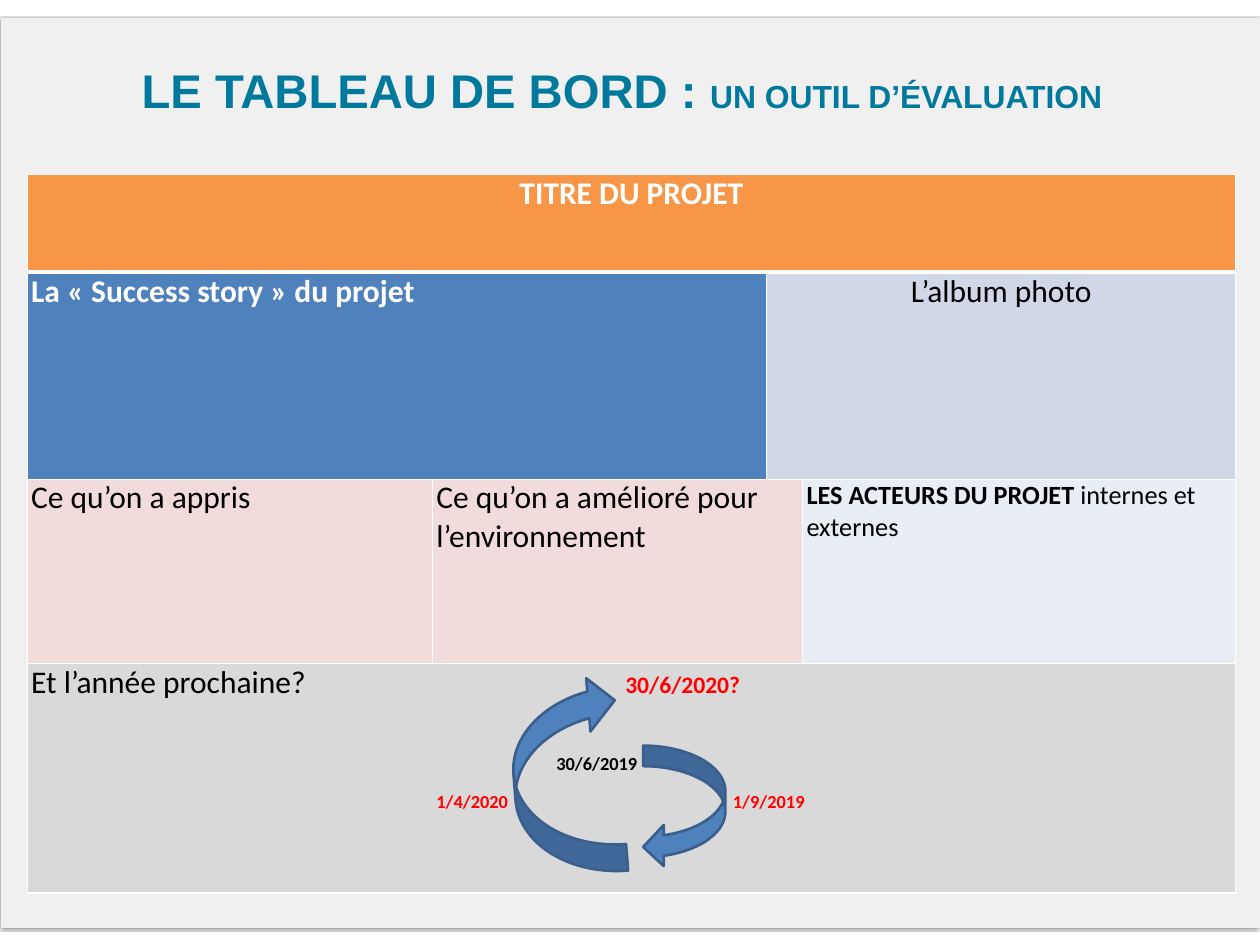
import pptx
import pptx.dml.color
import pptx.enum.shapes
import pptx.enum.text
import pptx.oxml
import pptx.oxml.ns
import pptx.util

ALIGN = pptx.enum.text.PP_ALIGN
# The slide is a grid of square steps, 133.4 columns by 100 rows
COLUMNS, ROWS = 133.4, 100
STEP = pptx.util.Inches(0.1)
NS = pptx.oxml.ns.nsdecls("a")


def grid(*steps):
    return [round(step * STEP) for step in steps]


def color(code):
    return pptx.dml.color.RGBColor.from_string(code)


def paint(item, code):
    item.fill.solid()
    item.fill.fore_color.rgb = color(code)


def write(para, text, font="Calibri", size=24, code="000000", bold=False):
    span = para.add_run()
    span.text = text
    span.font.name = font
    span.font.size = pptx.util.Pt(size)
    span.font.bold = bold
    span.font.color.rgb = color(code)


def set_tabs(para, *stops):
    """Left tab stops, in grid steps from the start of the text."""
    tabs = "".join(f'<a:tab pos="{pos}" algn="l"/>' for pos in grid(*stops))
    para._p.get_or_add_pPr().append(
        pptx.oxml.parse_xml(f"<a:tabLst {NS}>{tabs}</a:tabLst>"))


def set_borders(cell, bottom=1):
    props = cell._tc.get_or_add_tcPr()
    for index, side in enumerate("LRTB"):
        width = pptx.util.Pt(bottom if side == "B" else 1)
        props.insert(index, pptx.oxml.parse_xml(
            f'<a:ln{side} {NS} w="{width}"><a:solidFill>'
            f'<a:srgbClr val="FFFFFF"/></a:solidFill></a:ln{side}>'))


def add_panel(page, box):
    panel = page.shapes.add_shape(
        pptx.enum.shapes.MSO_SHAPE.RECTANGLE, *grid(*box))
    paint(panel, "F0F0F0")
    panel.line.fill.background()
    panel._element.spPr.append(pptx.oxml.parse_xml(
        f'<a:effectLst {NS}><a:outerShdw blurRad="25400" dist="12700" '
        'dir="5400000" rotWithShape="0"><a:srgbClr val="000000">'
        '<a:alpha val="50000"/></a:srgbClr></a:outerShdw></a:effectLst>'))
    # Keep the panel behind the title
    page.shapes._spTree.insert(2, panel._element)


def add_title(page, box):
    title = page.shapes.title
    title.left, title.top, title.width, title.height = grid(*box)
    frame = title.text_frame
    frame.margin_left = frame.margin_right = 0
    frame.margin_top = frame.margin_bottom = 0
    frame.auto_size = pptx.enum.text.MSO_AUTO_SIZE.NONE
    frame.vertical_anchor = pptx.enum.text.MSO_ANCHOR.TOP
    para = frame.paragraphs[0]
    para.alignment = ALIGN.LEFT
    style = dict(font="Arial", code="00799D", bold=True)
    write(para, "LE TABLEAU DE BORD : ", size=36, **style)
    write(para, "UN OUTIL D’ÉVALUATION", size=24.3, **style)


def add_dashboard(page, box):
    widths = (42.9, 35.4, 3.8, 45.8)
    heights = (10.3, 21.9, 19.5, 24.3)
    table = page.shapes.add_table(
        len(heights), len(widths), *grid(*box)).table
    table.first_row = table.horz_banding = False
    for column, width in zip(table.columns, grid(*widths)):
        column.width = width
    for row, height in zip(table.rows, grid(*heights)):
        row.height = height

    # Row, first column, last column, fill, alignment, (text, format) spans
    heading = dict(code="FFFFFF", bold=True)
    areas = [
        (0, 0, 3, "F79646", ALIGN.CENTER, [("TITRE DU PROJET", heading)]),
        (1, 0, 1, "4F81BD", ALIGN.LEFT,
         [("La «\u00a0Success story\u00a0» du projet".replace("\u00a0", " "), heading)]),
        (1, 2, 3, "D0D8E8", ALIGN.CENTER, [("L’album photo", {})]),
        (2, 0, 0, "F2DCDB", ALIGN.LEFT, [("Ce qu’on a appris", {})]),
        (2, 1, 2, "F2DCDB", ALIGN.LEFT,
         [("Ce qu’on a amélioré pour l’environnement", {})]),
        (2, 3, 3, "E9EDF4", ALIGN.LEFT,
         [("LES ACTEURS DU PROJET ", dict(size=20, bold=True)),
          ("internes et externes", dict(size=20))]),
        (3, 0, 3, "D9D9D9", ALIGN.LEFT, [("Et l’année prochaine?", {})]),
    ]
    for row, first, last, fill, align, spans in areas:
        cell = table.cell(row, first)
        if last > first:
            cell.merge(table.cell(row, last))
        for column in range(first, last + 1):
            part = table.cell(row, column)
            paint(part, fill)
            set_borders(part, bottom=3 if row == 0 else 1)
        cell.margin_left, cell.margin_right = grid(0.4, 0.4)
        cell.margin_top = cell.margin_bottom = 0
        para = cell.text_frame.paragraphs[0]
        para.alignment = align
        for text, style in spans:
            write(para, text, **style)
    add_dates(table.cell(3, 0).text_frame)


def add_dates(frame):
    """Dates of the yearly cycle, set on tab stops around the arrows."""
    para = frame.paragraphs[0]
    set_tabs(para, 62.9)
    write(para, "\t30/6/2020?", size=18, code="FF0000", bold=True)
    lines = [
        ("\t30/6/2019", "000000", 39, (55.6,)),
        ("\t1/4/2020\t1/9/2019", "FF0000", 12, (42.9, 74.3)),
    ]
    for text, code, gap, stops in lines:
        para = frame.add_paragraph()
        para.space_before = pptx.util.Pt(gap)
        set_tabs(para, *stops)
        write(para, text, size=14, code=code, bold=True)


def add_cycle_arrow(page, box, rotation=0):
    arrow = page.shapes.add_shape(
        pptx.enum.shapes.MSO_SHAPE.CURVED_LEFT_ARROW, *grid(*box))
    arrow.shadow.inherit = False
    arrow.rotation = rotation
    paint(arrow, "4F81BD")
    arrow.line.color.rgb = color("3A5F8C")
    arrow.line.width = pptx.util.Pt(2)


def main():
    deck = pptx.Presentation()
    deck.slide_width, deck.slide_height = grid(COLUMNS, ROWS)
    page = deck.slides.add_slide(deck.slide_layouts[5])  # title only
    add_panel(page, (0.1, 1.9, COLUMNS - 0.1, 96.3))
    add_title(page, (15, 6.5, 118, 10.7))
    add_dashboard(page, (2.9, 18.5, 127.9, 76))
    add_cycle_arrow(page, (68.1, 78.9, 8.7, 12.9))
    add_cycle_arrow(page, (54.4, 71.7, 11.3, 20.9), rotation=175.5)
    deck.save("out.pptx")


if __name__ == "__main__":
    main()
